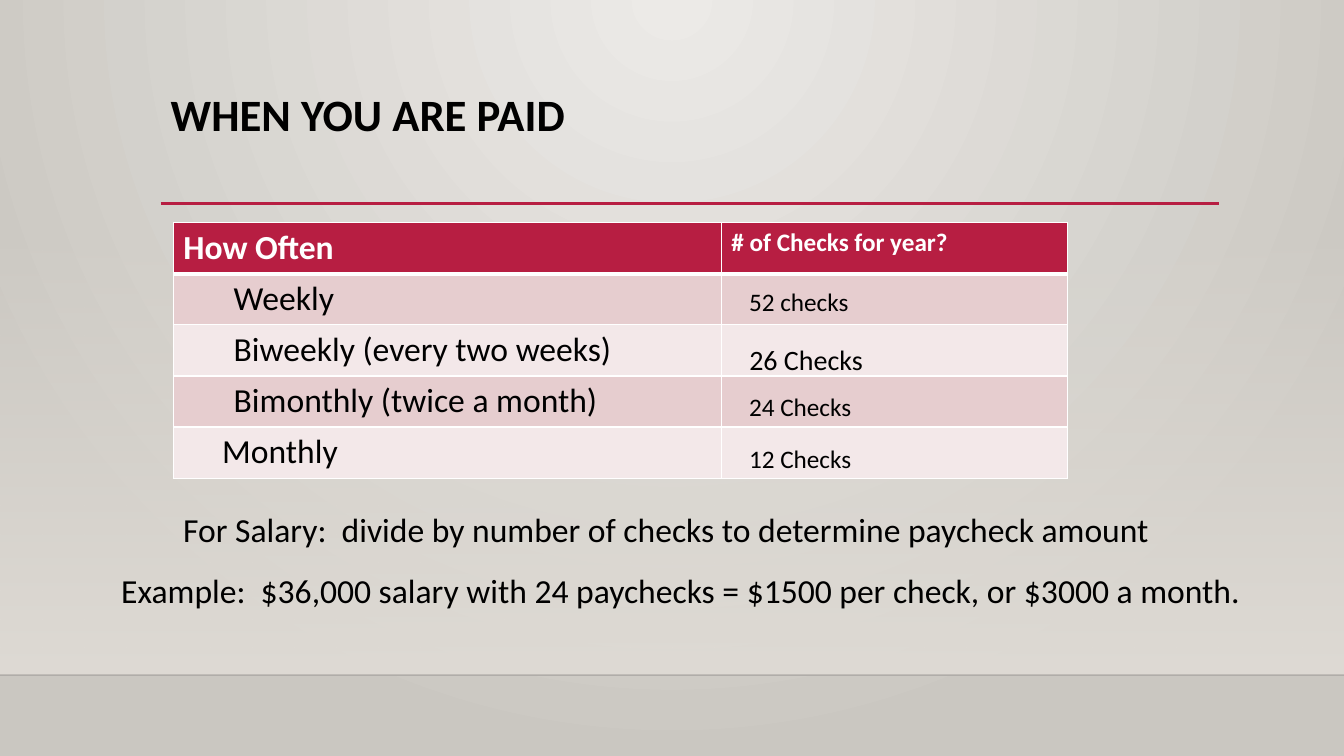
from lxml.etree import SubElement
from pptx import Presentation
from pptx.dml.color import RGBColor
from pptx.enum.shapes import MSO_CONNECTOR, MSO_SHAPE
from pptx.enum.text import MSO_ANCHOR, MSO_AUTO_SIZE
from pptx.oxml.ns import qn
from pptx.util import Pt

PX = 9525
SLIDE_W, SLIDE_H = 1280, 720
CRIMSON = RGBColor(0xB7, 0x1E, 0x42)
PINK = RGBColor(0xE6, 0xCD, 0xCF)
PALE_PINK = RGBColor(0xF3, 0xE8, 0xE9)
BLACK = RGBColor(0, 0, 0)
NEAR_BLACK = RGBColor(0, 0, 1)
WHITE = RGBColor(0xFF, 0xFF, 0xFF)
GLOW = RGBColor(0xEC, 0xEA, 0xE7)
STONE = RGBColor(0xCA, 0xC7, 0xC1)
SAND = RGBColor(0xDF, 0xDB, 0xD5)

SCHEDULE = [("How Often", 0), ("Weekly", 48), ("Biweekly (every two weeks)", 48),
            ("Bimonthly (twice a month)", 48), ("Monthly", 37)]
CHECK_COUNTS = [("52 checks", 268, 304), ("24 Checks", 368, 560), ("12 Checks", 417, 326)]


def place(shape, left, top, width, height):
    box = {"left": left, "top": top, "width": width, "height": height}
    for side, length in box.items():
        setattr(shape, side, length * PX)


def write(paragraph, text, size, color=BLACK, bold=False):
    paragraph.text = text
    font_format = {"name": "Calibri", "size": Pt(size), "bold": bold}
    for run in paragraph.runs:
        for attribute, value in font_format.items():
            setattr(run.font, attribute, value)
        run.font.color.rgb = color


def set_frame(frame, wrap=True):
    frame_format = {"word_wrap": wrap, "auto_size": MSO_AUTO_SIZE.NONE,
                    "vertical_anchor": MSO_ANCHOR.TOP}
    for attribute, value in frame_format.items():
        setattr(frame, attribute, value)


def set_alpha(element, percent):
    """Make the first RGB colour inside the element partly transparent."""
    color = next(element.iter(qn("a:srgbClr")))
    SubElement(color, qn("a:alpha"), val=str(percent * 1000))


def fill_gradient(fill, start, end):
    fill.gradient()
    fill.gradient_angle = 270
    for stop, color, position in zip(fill.gradient_stops, (start, end), (0, 1)):
        stop.color.rgb = color
        stop.position = position


def paint_background(slide):
    """Spread a circular glow from the top middle of the slide."""
    fill_gradient(slide.background.fill, GLOW, STONE)
    gradient = next(slide.element.iter(qn("a:gradFill")))
    gradient.remove(gradient.find(qn("a:lin")))
    circle = SubElement(gradient, qn("a:path"), path="circle")
    SubElement(circle, qn("a:fillToRect"), l="43000", t="0", r="43000", b="100000")


def add_wall(slide):
    """Add the panel that fades in towards the floor line."""
    wall = slide.shapes.add_shape(MSO_SHAPE.RECTANGLE, 0, 212 * PX, SLIDE_W * PX, 431 * PX)
    wall.shadow.inherit = False
    wall.line.fill.background()
    fill_gradient(wall.fill, SAND, SAND)
    set_alpha(wall.element, 0)


def add_rule(slide, left, right, y, color, weight):
    rule = slide.shapes.add_connector(
        MSO_CONNECTOR.STRAIGHT, left * PX, y * PX, right * PX, y * PX)
    rule.line.color.rgb = color
    rule.line.width = Pt(weight)
    SubElement(rule.element.spPr, qn("a:effectLst"))
    return rule


def add_text(slide, text, left, top, width, height, size, wrap=True):
    box = slide.shapes.add_textbox(0, 0, 0, 0)
    place(box, left, top, width, height)
    set_frame(box.text_frame, wrap)
    write(box.text_frame.paragraphs[0], text, size)


def set_borders(cell, top, bottom):
    properties = cell._tc.get_or_add_tcPr()
    weights = {"a:lnL": 1, "a:lnR": 1, "a:lnT": top, "a:lnB": bottom}
    for index, (tag, weight) in enumerate(weights.items()):
        border = SubElement(properties, qn(tag), w=str(Pt(weight)))
        solid = SubElement(border, qn("a:solidFill"))
        SubElement(solid, qn("a:srgbClr"), val=str(WHITE))
        properties.insert(index, border)


def add_schedule(slide):
    table = slide.shapes.add_table(
        len(SCHEDULE), 2, 165 * PX, 212 * PX, 852 * PX, 240 * PX).table
    for column, width in zip(table.columns, (522, 330)):
        column.width = width * PX
    for row, (label, indent) in enumerate(SCHEDULE):
        header = row == 0
        row_fill = CRIMSON if header else (PALE_PINK, PINK)[row % 2]
        for column in range(2):
            cell = table.cell(row, column)
            cell.fill.solid()
            cell.fill.fore_color.rgb = row_fill
            set_borders(cell, 3 if row == 1 else 1, 3 if header else 1)
        name = table.cell(row, 0).text_frame.paragraphs[0]
        write(name, label, 24, WHITE if header else BLACK, header)
        name._p.get_or_add_pPr().set("marL", str(indent * PX))
    write(table.cell(0, 1).text_frame.paragraphs[0], "# of Checks for year?", 18, WHITE, True)


def fill_placeholder(holder, text, box, size, spacing, bold=False):
    place(holder, *box)
    set_frame(holder.text_frame)
    paragraph = holder.text_frame.paragraphs[0]
    write(paragraph, text, size, bold=bold)
    paragraph.line_spacing = spacing
    paragraph.space_before = Pt(0)
    properties = paragraph._p.get_or_add_pPr()
    properties.set("marL", "0")
    properties.set("indent", "0")
    properties.set("algn", "l")
    SubElement(properties, qn("a:buNone"))
    holder.element.getparent().append(holder.element)  # in front of the panel and table


def main():
    deck = Presentation()
    deck.slide_width, deck.slide_height = SLIDE_W * PX, SLIDE_H * PX
    slide = deck.slides.add_slide(deck.slide_layouts[1])
    paint_background(slide)
    add_wall(slide)
    floor = add_rule(slide, 0, SLIDE_W, 643, NEAR_BLACK, 1)
    set_alpha(floor.element, 20)
    add_rule(slide, 153, 1161, 194, CRIMSON, 2.5)
    fill_placeholder(slide.shapes.title, "WHEN YOU ARE PAID", (153, 84, 1008, 110), 32, 0.9, True)
    add_schedule(slide)
    fill_placeholder(slide.placeholders[1], "26 Checks", (704, 315, 454, 77), 20, 1.2)
    for count, top, width in CHECK_COUNTS:
        add_text(slide, count, 704, top, width, 38, 18)
    add_text(slide, "For Salary:  divide by number of checks to determine paycheck amount",
             165, 480, 1024, 48, 24)
    add_text(slide, "Example:  $36,000 salary with 24 paychecks = $1500 per check, "
             "or $3000 a month.", 106, 538, 1102, 87, 24, wrap=False)
    deck.save("out.pptx")


if __name__ == "__main__":
    main()
